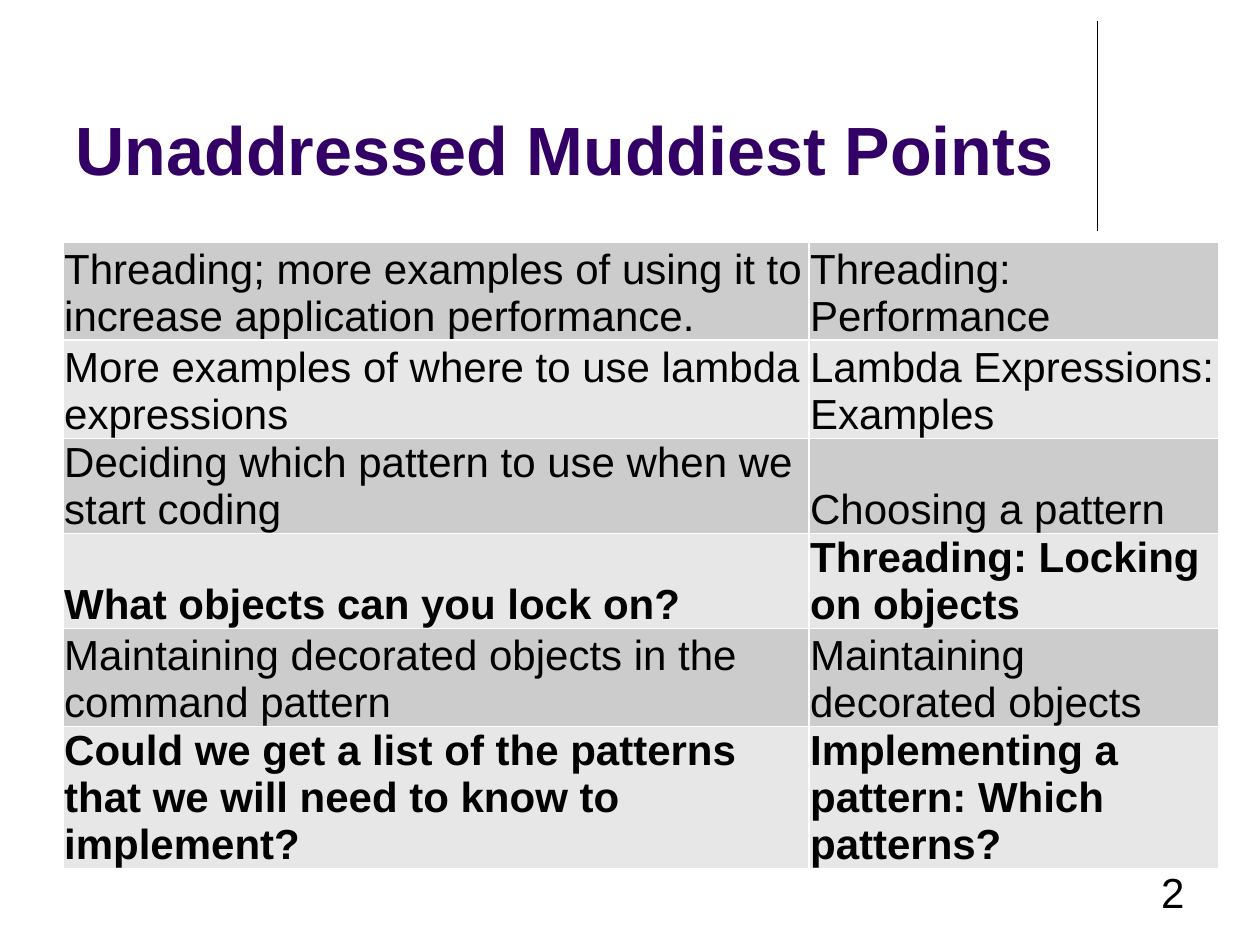
from dataclasses import dataclass

import lxml.etree
import pptx
import pptx.dml.color
import pptx.enum.shapes
import pptx.enum.text
import pptx.oxml.ns
import pptx.util

Inches = pptx.util.Inches
Pt = pptx.util.Pt
ALIGN = pptx.enum.text.PP_ALIGN
ANCHOR = pptx.enum.text.MSO_ANCHOR
qn = pptx.oxml.ns.qn


@dataclass(frozen=True)
class Theme:
    font: str = "Arial"
    title_size: float = 39
    body_size: float = 24
    title: str = "330066"
    text: str = "000000"
    border: str = "FFFFFF"
    bands: tuple = ("CCCCCC", "E7E7E7")


def rgb(value):
    return pptx.dml.color.RGBColor.from_string(value)


def write(tf, text, *, font, size, color, bold=False, align=ALIGN.LEFT,
          anchor=ANCHOR.TOP):
    """Put one formatted paragraph in a text frame."""
    tf.word_wrap = True
    tf.vertical_anchor = anchor
    p = tf.paragraphs[0]
    p.alignment = align
    r = p.add_run()
    r.text = text
    r.font.name = font
    r.font.size = Pt(size)
    r.font.bold = bold
    r.font.color.rgb = rgb(color)


class SlideBuilder:
    def __init__(self, prs, theme):
        self.theme = theme
        self.s = prs.slides.add_slide(prs.slide_layouts[5])

    def title(self, text, left, top, width, height):
        sp = self.s.shapes.title
        sp.left, sp.top = Inches(left), Inches(top)
        sp.width, sp.height = Inches(width), Inches(height)
        sp.text_frame.auto_size = pptx.enum.text.MSO_AUTO_SIZE.NONE
        write(sp.text_frame, text, font=self.theme.font,
              size=self.theme.title_size, color=self.theme.title,
              bold=True, anchor=ANCHOR.BOTTOM)

    def line(self, x1, y1, x2, y2, width=0.75):
        cx = self.s.shapes.add_connector(
            pptx.enum.shapes.MSO_CONNECTOR.STRAIGHT,
            Inches(x1), Inches(y1), Inches(x2), Inches(y2))
        cx.line.color.rgb = rgb(self.theme.text)
        cx.line.width = Pt(width)
        lxml.etree.SubElement(cx._element.spPr, qn("a:effectLst"))

    def text(self, text, left, top, width, height, align=ALIGN.LEFT):
        sp = self.s.shapes.add_textbox(
            Inches(left), Inches(top), Inches(width), Inches(height))
        write(sp.text_frame, text, font=self.theme.font,
              size=self.theme.body_size, color=self.theme.text, align=align)

    def borders(self, cell, width=1):
        tcPr = cell._tc.get_or_add_tcPr()
        for i, side in enumerate(("lnL", "lnR", "lnT", "lnB")):
            ln = lxml.etree.Element(qn(f"a:{side}"), w=str(Pt(width)))
            fill = lxml.etree.SubElement(ln, qn("a:solidFill"))
            lxml.etree.SubElement(fill, qn("a:srgbClr"), val=self.theme.border)
            tcPr.insert(i, ln)

    def table(self, rows, left, top, height, col_widths, row_heights):
        frame = self.s.shapes.add_table(
            len(rows), len(col_widths), Inches(left), Inches(top),
            Inches(sum(col_widths)), Inches(height))
        tbl = frame.table
        tbl.first_row = False
        for col, width in zip(tbl.columns, col_widths):
            col.width = Inches(width)
        for i, (*texts, bold) in enumerate(rows):
            tbl.rows[i].height = Inches(row_heights[i])
            for j, text in enumerate(texts):
                cell = tbl.cell(i, j)
                cell.margin_left = cell.margin_right = Inches(0.01)
                cell.margin_top, cell.margin_bottom = Inches(0.01), 0
                cell.vertical_anchor = ANCHOR.BOTTOM
                cell.fill.solid()
                cell.fill.fore_color.rgb = rgb(self.theme.bands[i % 2])
                self.borders(cell)
                write(cell.text_frame, text, font=self.theme.font,
                      size=self.theme.body_size, color=self.theme.text,
                      bold=bold, anchor=None)
        frame.height = Inches(height)


# Question, topic, still open (bold)
POINTS = [
    ("Threading; more examples of using it to increase application performance.",
     "Threading: Performance", False),
    ("More examples of where to use lambda expressions",
     "Lambda Expressions: Examples", False),
    ("Deciding which pattern to use when we start coding",
     "Choosing a pattern", False),
    ("What objects can you lock on?",
     "Threading: Locking on objects", True),
    ("Maintaining decorated objects in the command pattern",
     "Maintaining decorated objects", False),
    ("Could we get a list of the patterns that we will need to know to implement?",
     "Implementing a pattern: Which patterns?", True),
]


def main():
    prs = pptx.Presentation()
    prs.slide_width, prs.slide_height = Inches(10), Inches(7.5)
    slide = SlideBuilder(prs, Theme())

    # Heading with the vertical rule beside it
    slide.line(8.71, 0.17, 8.71, 1.83)
    slide.title("Unaddressed Muddiest Points", 0.5, 0.13, 8.25, 1.42)

    # Questions and their topics
    slide.table(POINTS, 0.5, 1.92, 5.25, col_widths=(5.92, 3.25),
                row_heights=(0.78, 0.78, 0.68, 0.52, 0.78, 0.78))

    # Slide number
    slide.text("2", 7.17, 6.83, 2.33, 0.5, align=ALIGN.RIGHT)

    prs.save("out.pptx")


if __name__ == "__main__":
    main()
